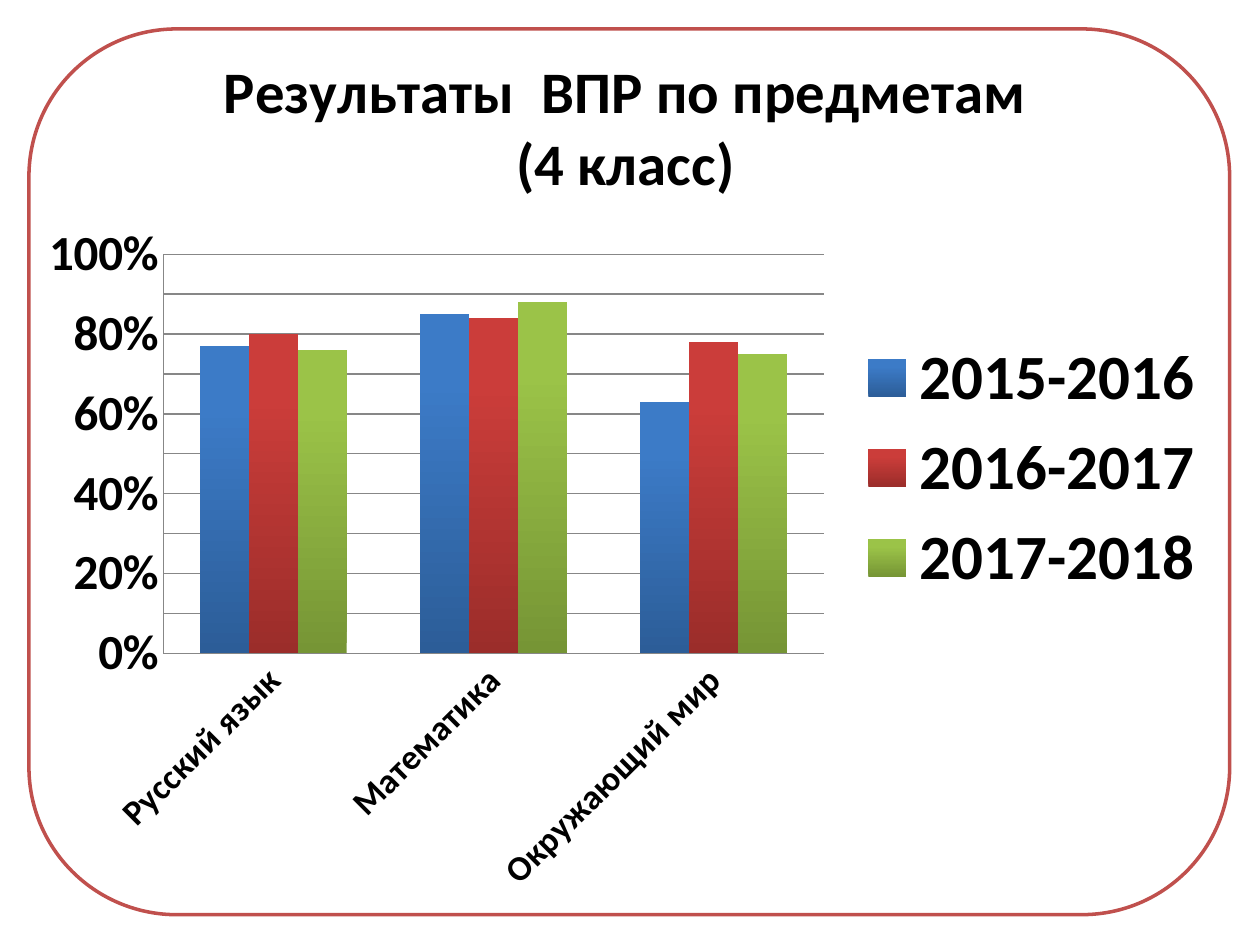
from lxml.etree import SubElement
from pptx import Presentation
from pptx.chart.data import CategoryChartData
from pptx.dml.color import RGBColor
from pptx.enum.chart import XL_CHART_TYPE, XL_LEGEND_POSITION, XL_TICK_MARK
from pptx.enum.shapes import MSO_SHAPE
from pptx.oxml.ns import qn
from pptx.util import Inches, Pt

FONT = "Calibri"
BLACK, WHITE, RED, GREY = "000000", "FFFFFF", "C0504D", "878787"
TITLE = ["Результаты  ВПР по предметам", "(4 класс)"]
SUBJECTS = ["Русский язык", "Математика", "Окружающий мир"]
YEARS = [
    ("2015-2016", [0.77, 0.85, 0.63], "2C5D98", "3C7BC7"),
    ("2016-2017", [0.80, 0.84, 0.78], "9B2D2A", "CB3D3A"),
    ("2017-2018", [0.76, 0.88, 0.75], "769535", "9BC348"),
]
PLOT_SHARES = {"x": 0.115, "y": 0.258, "w": 0.55, "h": 0.452}


def rgb(value):
    return RGBColor.from_string(value)


def set_font(font, size, bold=True):
    font.name = FONT
    font.size = Pt(size)
    font.bold = bold
    font.color.rgb = rgb(BLACK)


def add_frame(s, left, top, width, height):
    sp = s.shapes.add_shape(MSO_SHAPE.ROUNDED_RECTANGLE, left, top, width, height)
    sp.shadow.inherit = False
    sp.fill.solid()
    sp.fill.fore_color.rgb = rgb(WHITE)
    sp.line.color.rgb = rgb(RED)
    sp.line.width = Pt(2)


def add_title(chart):
    tf = chart.chart_title.text_frame
    for i, line in enumerate(TITLE):
        p = tf.paragraphs[0] if i == 0 else tf.add_paragraph()
        r = p.add_run()
        r.text = line
        set_font(r.font, 33.6)
    chart.chart_title.include_in_layout = False


def format_axis(axis, size):
    axis.major_tick_mark = axis.minor_tick_mark = XL_TICK_MARK.NONE
    axis.format.line.color.rgb = rgb(GREY)
    set_font(axis.tick_labels.font, size)


def format_axes(chart):
    values, subjects = chart.value_axis, chart.category_axis
    format_axis(values, 28)
    format_axis(subjects, 20)
    values.minimum_scale, values.maximum_scale, values.major_unit = 0, 1, 0.1
    values.tick_labels.number_format = "0%"
    values.tick_labels.number_format_is_linked = False
    values.major_gridlines.format.line.color.rgb = rgb(GREY)
    body = subjects._element.find(qn("c:txPr")).find(qn("a:bodyPr"))
    body.set("rot", "-2700000")
    body.set("vert", "horz")


def fill_series(series, bottom, top):
    fill = series.format.fill
    fill.gradient()
    fill.gradient_angle = 90
    for stop, color, position in zip(fill.gradient_stops, (bottom, top), (0, 0.8)):
        stop.color.rgb = rgb(color)
        stop.position = position


def place_plot(chart):
    area = chart._chartSpace.chart.plotArea
    layout = area.find(qn("c:layout"))
    if layout is None:
        layout = SubElement(area, qn("c:layout"))
        area.insert(0, layout)
    manual = SubElement(layout, qn("c:manualLayout"))
    settings = {"layoutTarget": "inner", "xMode": "edge", "yMode": "edge", **PLOT_SHARES}
    for name, value in settings.items():
        SubElement(manual, qn("c:" + name)).set("val", str(value))


def add_results_chart(s, left, top, width, height):
    data = CategoryChartData(number_format="0%")
    data.categories = SUBJECTS
    for name, values, _, _ in YEARS:
        data.add_series(name, values)
    chart = s.shapes.add_chart(
        XL_CHART_TYPE.COLUMN_CLUSTERED, left, top, width, height, data).chart
    set_font(chart.font, 28, False)
    add_title(chart)
    format_axes(chart)
    plot = chart.plots[0]
    plot.gap_width, plot.overlap = 150, 0
    plot.vary_by_categories = False
    for series, (_, _, bottom, top_color) in zip(plot.series, YEARS):
        fill_series(series, bottom, top_color)
    chart.has_legend = True
    chart.legend.position = XL_LEGEND_POSITION.RIGHT
    chart.legend.include_in_layout = False
    set_font(chart.legend.font, 36)
    place_plot(chart)


def main():
    prs = Presentation()
    prs.slide_width, prs.slide_height = Inches(10), Inches(7.5)
    s = prs.slides.add_slide(prs.slide_layouts[6])
    add_frame(s, Inches(0.23), Inches(0.23), Inches(9.53), Inches(7.03))
    add_results_chart(s, Inches(0.2), Inches(0.21), Inches(9.53), Inches(7.01))
    prs.save("out.pptx")


if __name__ == "__main__":
    main()
